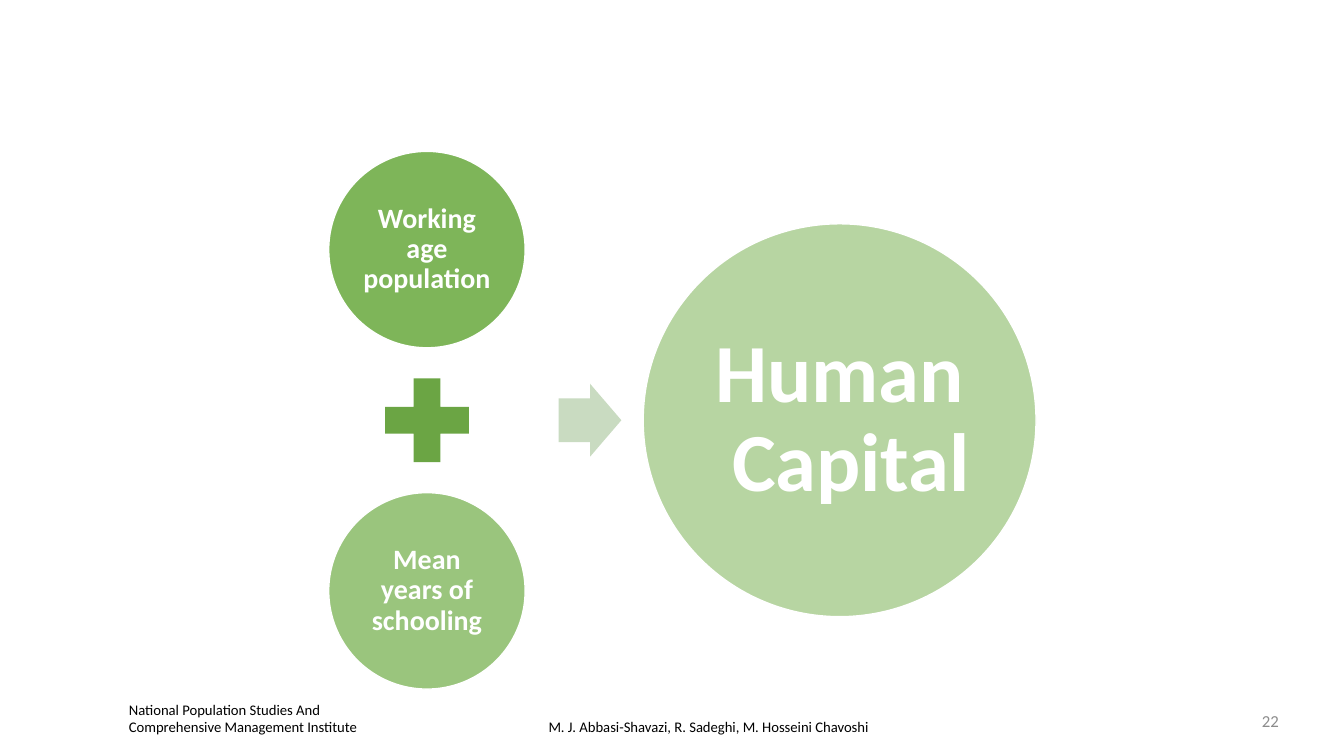
from dataclasses import dataclass
from lxml.etree import SubElement
from pptx import Presentation
from pptx.dml.color import RGBColor as Rgb
from pptx.enum.shapes import MSO_SHAPE as Kind
from pptx.enum.text import MSO_ANCHOR as Anchor, PP_ALIGN as Align
from pptx.oxml.ns import qn
from pptx.util import Cm, Pt


@dataclass(frozen=True)
class Theme:
    font: str = "Calibri"
    white: str = "FFFFFF"
    black: str = "000000"
    gray: str = "8C8C8C"
    green: str = "70AD47"
    plus: str = "6BA544"
    arrow: str = "C9DBC1"
    foot: float = 10.5
    number: float = 12
    factor: float = 20
    total: float = 59


@dataclass(frozen=True)
class Circle:
    text: str
    x: float
    y: float
    size: float
    alpha: int
    points: float
    inset: float


@dataclass(frozen=True)
class Sign:
    kind: Kind
    x: float
    width: float
    height: float
    color: str


@dataclass(frozen=True)
class Note:
    text: str
    left: float
    top: float
    width: float
    height: float
    size: float
    color: str
    align: Align = Align.LEFT
    anchor: Anchor = Anchor.MIDDLE


THEME = Theme()
MID = 10.59
STEP = 4.3
LEFT = 10.76

CIRCLES = [
    Circle("Working age population", LEFT, MID - STEP, 4.95, 90, THEME.factor, 0.07),
    Circle("Mean years of schooling", LEFT, MID + STEP, 4.95, 70, THEME.factor, 0.07),
    Circle("Human Capital ", 21.16, MID, 9.9, 50, THEME.total, 0.2),
]
SIGNS = [
    Sign(Kind.MATH_PLUS, LEFT, 2.87, 2.87, THEME.plus),
    Sign(Kind.RIGHT_ARROW, 14.87, 1.58, 1.84, THEME.arrow),
]
NOTES = [
    Note("National Population Studies And Comprehensive Management Institute",
         3, 17.53, 6.45, 1.14, THEME.foot, THEME.black, anchor=Anchor.TOP),
    Note("M. J. Abbasi-Shavazi, R. Sadeghi, M. Hosseini Chavoshi",
         9.53, 17.42, 16.66, 1.78, THEME.foot, THEME.black, Align.CENTER),
    Note("22", 31.55, 17.65, 1.37, 1.02, THEME.number, THEME.gray),
]


def write(shape, text: str, size: float, color: str, align: Align,
          anchor: Anchor, bold: bool = False):
    frame = shape.text_frame
    frame.text = text
    frame.word_wrap = True
    frame.vertical_anchor = anchor
    para = frame.paragraphs[0]
    para.alignment = align
    font = para.runs[0].font
    font.name = THEME.font
    font.size = Pt(size)
    font.bold = bold
    font.color.rgb = Rgb.from_string(color)
    return frame


def place(slide, kind: Kind, x: float, y: float, width: float,
          height: float, color: str):
    shape = slide.shapes.add_shape(
        kind, Cm(x - width / 2), Cm(y - height / 2), Cm(width), Cm(height))
    shape.shadow.inherit = False
    shape.fill.solid()
    shape.fill.fore_color.rgb = Rgb.from_string(color)
    shape.line.fill.background()
    return shape


def draw_circle(slide, item: Circle) -> None:
    shape = place(slide, Kind.OVAL, item.x, item.y, item.size, item.size, THEME.green)
    tint = shape._element.spPr.find(qn("a:solidFill")).find(qn("a:srgbClr"))
    SubElement(tint, qn("a:alpha")).set("val", str(item.alpha * 1000))
    shape.line.color.rgb = Rgb.from_string(THEME.white)
    shape.line.width = Pt(1)
    frame = write(shape, item.text, item.points, THEME.white,
                  Align.CENTER, Anchor.MIDDLE, True)
    frame.margin_left = frame.margin_right = Cm(item.inset)
    frame.margin_top = frame.margin_bottom = Cm(item.inset)
    para = frame.paragraphs[0]
    para.line_spacing = 0.9
    para._p.get_or_add_pPr().set("rtl", "1")


def draw_sign(slide, item: Sign) -> None:
    shape = place(slide, item.kind, item.x, MID, item.width, item.height, item.color)
    if item.kind == Kind.RIGHT_ARROW:
        shape.adjustments[0] = 0.6
        shape.adjustments[1] = 0.5


def draw_note(slide, item: Note) -> None:
    box = slide.shapes.add_textbox(
        Cm(item.left), Cm(item.top), Cm(item.width), Cm(item.height))
    write(box, item.text, item.size, item.color, item.align, item.anchor)


def main() -> None:
    deck = Presentation()
    deck.slide_width, deck.slide_height = Cm(33.87), Cm(19.05)
    slide = deck.slides.add_slide(deck.slide_layouts[6])
    for note in NOTES:
        draw_note(slide, note)
    for circle in CIRCLES:
        draw_circle(slide, circle)
    for sign in SIGNS:
        draw_sign(slide, sign)
    deck.save("out.pptx")


if __name__ == "__main__":
    main()
